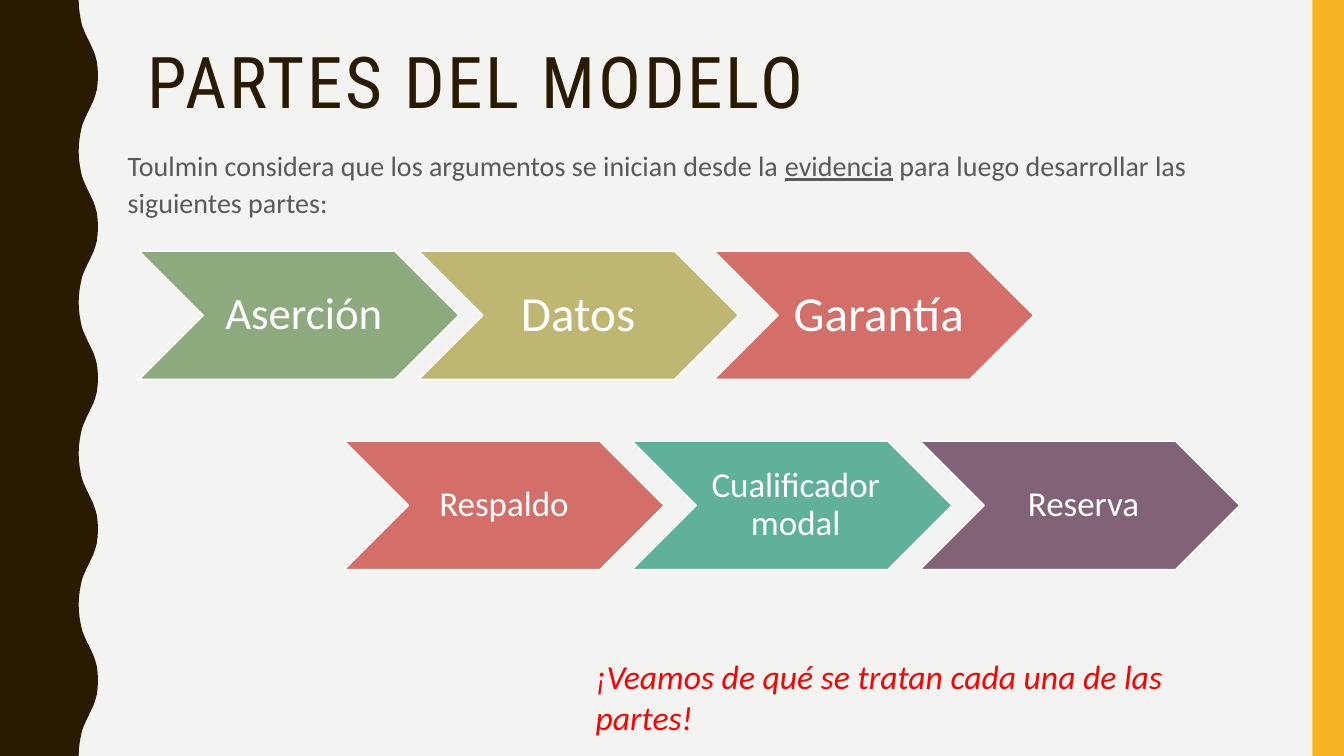
from pptx import Presentation
from pptx.dml.color import RGBColor as RGB
from pptx.enum.shapes import MSO_SHAPE as Shape
from pptx.enum.text import MSO_ANCHOR as Anchor, PP_ALIGN as Align
from pptx.util import Pt

WIDE, HIGH = 960, 540
HEX = {
    "paper": "F3F3F2", "brown": "2A1A00", "gold": "F8B323",
    "gray": "595959", "white": "FFFFFF", "red": "FF0000",
    "green": "8CAA7E", "olive": "BFB672", "coral": "D36F68",
    "teal": "5FB19A", "plum": "826276",
}

# Half a wave of the left edge, as (x, y); the other half mirrors it
HALF = [(56.2, 0), (56.4, 5), (57, 10), (57.8, 14.4), (58.6, 18),
        (59.7, 21), (61, 24), (62.4, 27), (63.9, 30), (65.3, 33),
        (66.7, 36), (68, 39.6), (69.2, 44), (69.8, 49), (70, 54)]
WAVE = 108

# Chevron rows: top, text size, text insets, then (left, text, colour)
SIZE = (228.4, 91.6)
STEP = 205.6
TOP_ROW = [(99.4, "Aserción", "green", 32), (299.2, "Datos ", "olive", 35),
           (510, "Garantía", "coral", 35)]
LOW_ROW = [("Respaldo ", "coral"), ("Cualificador modal", "teal"),
           ("Reserva", "plum")]


def color(name):
    return RGB.from_string(HEX[name])


def paint(shape, fill, line=None):
    shape.shadow.inherit = False
    shape.fill.solid()
    shape.fill.fore_color.rgb = color(fill)
    if line:
        shape.line.color.rgb = color(line)
        shape.line.width = Pt(1)
    else:
        shape.line.fill.background()


def write(frame, *parts, size=20, ink="white", face="Calibri", align=Align.LEFT,
          anchor=Anchor.TOP, lead=1.0, inset=(7.2, 3.6, 7.2, 3.6),
          italic=False, track=0, under=None):
    """Fill one paragraph with runs; the part equal to under is underlined."""
    frame.word_wrap = True
    frame.vertical_anchor = anchor
    (frame.margin_left, frame.margin_top,
     frame.margin_right, frame.margin_bottom) = map(Pt, inset)
    para = frame.paragraphs[0]
    para.alignment, para.line_spacing = align, lead
    for part in parts:
        run = para.add_run()
        run.text = part
        font = run.font
        font.name, font.size, font.italic = face, Pt(size), italic
        font.color.rgb = color(ink)
        if part == under:
            font.underline = True
        if track:
            run._r.get_or_add_rPr().set("spc", str(track * 100))


def add_text(slide, box, *parts, **form):
    shape = slide.shapes.add_textbox(*map(Pt, box))
    write(shape.text_frame, *parts, **form)


def add_wave(slide):
    full = HALF + [(x, WAVE - y) for x, y in HALF[-2::-1]]
    edge = [(x, y + top) for top in range(0, HIGH, WAVE) for x, y in full]
    points = [(Pt(x), Pt(y)) for x, y in edge + [(0, HIGH)]]
    pen = slide.shapes.build_freeform(0, 0)
    pen.add_line_segments(points, close=True)
    paint(pen.convert_to_shape(), "brown")


def add_chevron(slide, left, top, text, fill, size, inset):
    shape = slide.shapes.add_shape(Shape.CHEVRON, Pt(left), Pt(top),
                                   *map(Pt, SIZE))
    paint(shape, fill, "white")
    write(shape.text_frame, text, size=size, align=Align.CENTER,
          anchor=Anchor.MIDDLE, lead=0.9, inset=inset)


def main():
    deck = Presentation()
    deck.slide_width, deck.slide_height = Pt(WIDE), Pt(HIGH)
    slide = deck.slides.add_slide(deck.slide_layouts[6])
    back = slide.background.fill
    back.solid()
    back.fore_color.rgb = color("paper")

    # Side bands
    add_wave(slide)
    band = slide.shapes.add_shape(Shape.RECTANGLE, Pt(937.5), 0,
                                  Pt(22.5), Pt(HIGH))
    paint(band, "gold")

    # Title and lead-in
    add_text(slide, (98.6, 30.2, 801.4, 117.4), "PARTES DEL MODELO", size=51,
             ink="brown", face="Roboto Condensed", lead=0.9, track=2)
    add_text(slide, (84.2, 100.1, 801.4, 77.8),
             "Toulmin considera que los argumentos se inician desde la ",
             "evidencia", " para luego desarrollar las siguientes partes:",
             ink="gray", lead=1.1, under="evidencia")

    # Chevrons
    for left, text, fill, size in TOP_ROW:
        add_chevron(slide, left, 179.4, text, fill, size, (10.6, 3.6, 3.6, 3.6))
    for i, (text, fill) in enumerate(LOW_ROW):
        add_chevron(slide, 246 + i * STEP, 315.2, text, fill, 25,
                    (8, 2.8, 2.8, 2.8))

    # Closing line
    add_text(slide, (418.4, 465.1, 467.2, 36),
             "¡Veamos de qué se tratan cada una de las partes!",
             size=24, ink="red", italic=True)

    deck.save("out.pptx")


if __name__ == "__main__":
    main()
